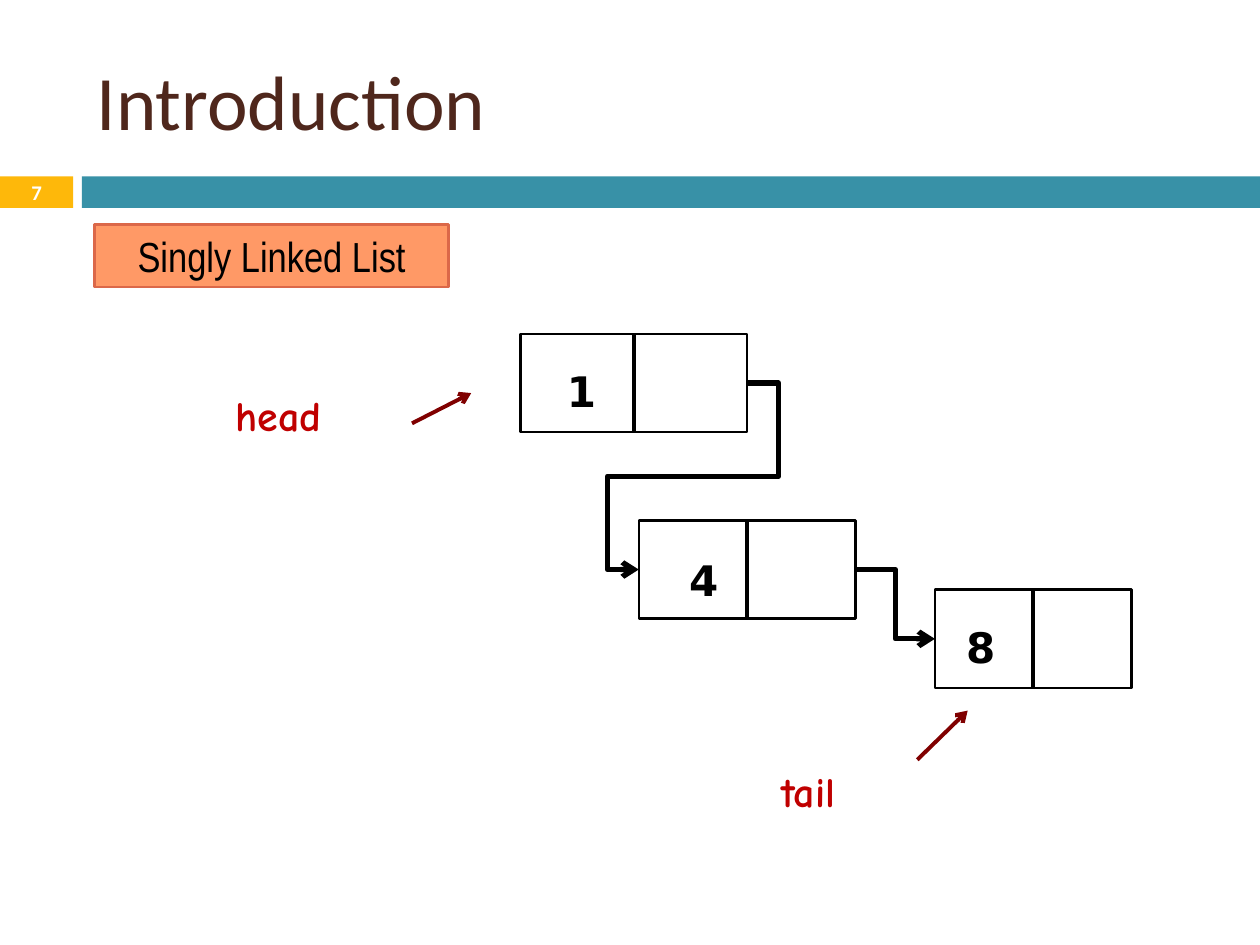
from lxml import etree
from pptx import Presentation
from pptx.dml.color import RGBColor
from pptx.enum.shapes import MSO_CONNECTOR as CONNECTOR, MSO_SHAPE as SHAPE
from pptx.enum.text import MSO_ANCHOR as ANCHOR, PP_ALIGN as ALIGN
from pptx.oxml.ns import qn
from pptx.util import Inches, Pt

TOP, LEFT, BOTTOM, RIGHT = range(4)
BLACK, WHITE = "000000", "FFFFFF"
NODE_HEIGHT = 0.78


def color(hex_string):
    return RGBColor.from_string(hex_string)


def write(shape, text, size=24, font="Calibri", fill=BLACK, bold=False,
          align=ALIGN.LEFT, anchor=ANCHOR.TOP, wrap=True):
    frame = shape.text_frame
    frame.word_wrap = wrap
    frame.vertical_anchor = anchor
    paragraph = frame.paragraphs[0]
    paragraph.alignment = align
    run = paragraph.add_run()
    run.text = text
    run.font.size = Pt(size)
    run.font.name = font
    run.font.bold = bold
    run.font.color.rgb = color(fill)


def add_text(slide, box, text, **text_format):
    write(slide.shapes.add_textbox(*map(Inches, box)), text, **text_format)


def add_rectangle(slide, box, fill, line=None):
    shape = slide.shapes.add_shape(SHAPE.RECTANGLE, *map(Inches, box))
    shape.shadow.inherit = False
    shape.fill.solid()
    shape.fill.fore_color.rgb = color(fill)
    if line:
        shape.line.color.rgb = color(line)
        shape.line.width = Pt(1.5)
    else:
        shape.line.fill.background()
    return shape


def add_line(slide, start=(0, 0), end=(0, 0), fill=BLACK, width=2.25,
             kind=CONNECTOR.STRAIGHT, arrow=False):
    line = slide.shapes.add_connector(kind, *map(Inches, (*start, *end)))
    line.line.color.rgb = color(fill)
    line.line.width = Pt(width)
    properties = line._element.spPr
    if arrow:
        etree.SubElement(properties.find(qn("a:ln")), qn("a:tailEnd"), type="arrow")
    etree.SubElement(properties, qn("a:effectLst"))
    return line


def add_header(slide, top, title, number):
    split, bar_left, height = 0.58, 0.65, 0.25
    add_rectangle(slide, (0, top, split, height), "FEB80A")
    add_rectangle(slide, (bar_left, top, 10 - bar_left, height), "3891A7")
    add_text(slide, (0.67, 0.25, 8.92, 1.08), title, size=44, fill="4F271C",
             anchor=ANCHOR.MIDDLE)
    add_text(slide, (0, top - 0.01, split, 0.27), number, size=11.9, fill=WHITE,
             bold=True, align=ALIGN.CENTER, anchor=ANCHOR.MIDDLE)


def add_node(slide, left, top, width, value, value_offset):
    """Draw a list node: a value cell and an empty pointer cell."""
    node = add_rectangle(slide, (left, top, width, NODE_HEIGHT), WHITE, BLACK)
    divider = add_line(slide)
    divider.begin_connect(node, TOP)
    divider.end_connect(node, BOTTOM)
    x, y = value_offset
    add_text(slide, (left + x, top + y, 0.42, 0.39), value, font="DejaVu Sans",
             bold=True, wrap=False)
    return node


def link_nodes(slide, source, target, preset, adjustments):
    """Join two nodes by a bent arrow; adjustments are fractions of its size."""
    link = add_line(slide, width=3, kind=CONNECTOR.ELBOW, arrow=True)
    link.begin_connect(source, RIGHT)
    link.end_connect(target, LEFT)
    geometry = link._element.spPr.find(qn("a:prstGeom"))
    geometry.set("prst", preset)
    guides = geometry.get_or_add_avLst()
    for index, fraction in enumerate(adjustments, start=1):
        etree.SubElement(guides, qn("a:gd"), name=f"adj{index}",
                         fmla=f"val {round(fraction * 100000)}")


def add_pointer(slide, box, name, start, end):
    """Name one end of the list and point an arrow at its node."""
    add_text(slide, box, name, font="Comic Neue", fill="C00000", bold=True)
    add_line(slide, start, end, fill="800000", arrow=True)


def add_linked_list(slide, left, top):
    first = add_node(slide, left, top, 1.8, "1", (0.27, 0.2))
    second = add_node(slide, left + 0.94, top + 1.48, 1.72, "4", (0.3, 0.22))
    third = add_node(slide, left + 3.29, top + 2.03, 1.56, "8", (0.15, 0.2))
    link_nodes(slide, first, second, "bentConnector5", (-0.29, 0.5, 1.29))
    link_nodes(slide, second, third, "bentConnector3", (0.5,))
    add_pointer(slide, (left - 2.36, top + 0.39, 1.18, 0.5), "head",
                (left - 0.86, top + 0.71), (left - 0.39, top + 0.47))
    add_pointer(slide, (left + 1.97, top + 3.38, 0.91, 0.5), "tail",
                (left + 3.15, top + 3.38), (left + 3.55, top + 2.99))


def main():
    presentation = Presentation()
    presentation.slide_width = Inches(10)
    presentation.slide_height = Inches(7.5)
    slide = presentation.slides.add_slide(presentation.slide_layouts[6])
    add_header(slide, 1.4, "Introduction", "7")
    label = add_rectangle(slide, (0.75, 1.78, 2.81, 0.5), "FF9966", "DB6849")
    write(label, "Singly Linked List", font="Arial Narrow", align=ALIGN.CENTER,
          anchor=ANCHOR.MIDDLE)
    add_linked_list(slide, 4.13, 2.65)
    presentation.save("out.pptx")


if __name__ == "__main__":
    main()
